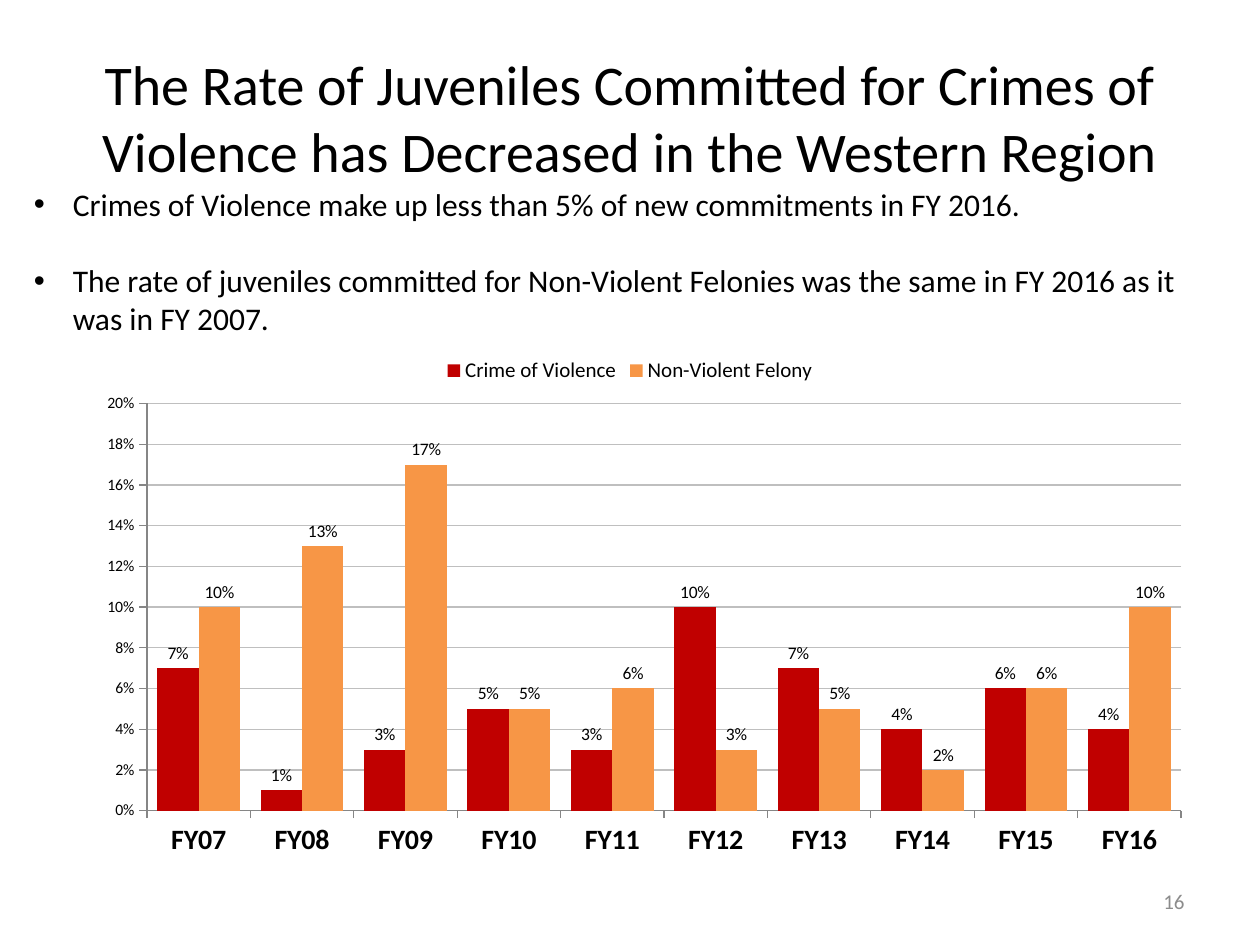
from dataclasses import dataclass

import pptx
import pptx.chart.data
import pptx.dml.color
import pptx.enum.chart
import pptx.enum.text
import pptx.oxml
import pptx.oxml.ns
import pptx.util
from pptx.util import Inches


@dataclass(frozen=True)
class Theme:
    font: str = "Calibri"
    text: str = "000000"
    muted: str = "8C8C8C"
    grid: str = "BFBFBF"
    axis: str = "868686"
    violence: str = "C00000"
    felony: str = "F79646"
    title_size: int = 32
    body_size: int = 18
    category_size: int = 16
    small_size: int = 12
    label_size: int = 10
    scale_size: int = 9


THEME = Theme()

TITLE = ("The Rate of Juveniles Committed for Crimes of Violence "
         "has Decreased in the Western Region")
BULLETS = [
    "Crimes of Violence make up less than 5% of new commitments in FY 2016.",
    "The rate of juveniles committed for Non-Violent Felonies was the same "
    "in FY 2016 as it was in FY 2007.",
]
YEARS = [f"FY{year:02d}" for year in range(7, 17)]
SERIES = [
    ("Crime of Violence", THEME.violence,
     [0.07, 0.01, 0.03, 0.05, 0.03, 0.10, 0.07, 0.04, 0.06, 0.04]),
    ("Non-Violent Felony", THEME.felony,
     [0.10, 0.13, 0.17, 0.05, 0.06, 0.03, 0.05, 0.02, 0.06, 0.10]),
]
PLOT_AREA = {"x": 0.074, "y": 0.112, "w": 0.912, "h": 0.766}


def apply(target, values):
    for name, value in values.items():
        setattr(target, name, value)


def rgb(color):
    return pptx.dml.color.RGBColor.from_string(color)


def format_font(font, size, color=THEME.text, bold=False):
    apply(font, {"name": THEME.font, "size": pptx.util.Pt(size), "bold": bold})
    font.color.rgb = rgb(color)


def format_line(line, color):
    line.color.rgb = rgb(color)
    line.width = pptx.util.Pt(0.75)


def add_title(slide):
    title = slide.shapes.title
    apply(title, {"left": Inches(0.5), "top": Inches(0.3),
                  "width": Inches(9), "height": Inches(1.25)})
    title.text_frame.text = TITLE
    title.text_frame.vertical_anchor = pptx.enum.text.MSO_ANCHOR.MIDDLE
    paragraph = title.text_frame.paragraphs[0]
    paragraph.alignment = pptx.enum.text.PP_ALIGN.CENTER
    format_font(paragraph.runs[0].font, THEME.title_size)


def add_bullet_mark(paragraph):
    properties = paragraph._p.get_or_add_pPr()
    properties.set("marL", str(Inches(0.31)))
    properties.set("indent", str(-Inches(0.31)))
    namespace = pptx.oxml.ns.nsdecls("a")
    for xml in (f'<a:buFont {namespace} typeface="Arial"/>',
                f'<a:buChar {namespace} char="•"/>'):
        properties.append(pptx.oxml.parse_xml(xml))


def add_bullets(slide):
    box = slide.shapes.add_textbox(
        Inches(0.17), Inches(1.42), Inches(9.5), Inches(1.31))
    frame = box.text_frame
    frame.word_wrap = True
    frame.text = "\n".join(BULLETS)
    for paragraph in frame.paragraphs:
        format_font(paragraph.runs[0].font, THEME.body_size)
    for paragraph in frame.paragraphs[:-1]:
        paragraph.space_after = pptx.util.Pt(22)
    for paragraph in frame.paragraphs:
        add_bullet_mark(paragraph)


def add_page_number(slide, number):
    box = slide.shapes.add_textbox(
        Inches(7.17), Inches(6.95), Inches(2.33), Inches(0.4))
    frame = box.text_frame
    apply(frame, {"word_wrap": True, "text": number,
                  "vertical_anchor": pptx.enum.text.MSO_ANCHOR.MIDDLE})
    paragraph = frame.paragraphs[0]
    paragraph.alignment = pptx.enum.text.PP_ALIGN.RIGHT
    format_font(paragraph.runs[0].font, THEME.small_size, THEME.muted)


def place_plot_area(chart):
    """Fix the inner plot area as fractions of the chart."""
    plot_area = chart._chartSpace.chart.plotArea
    for old_layout in plot_area.findall(pptx.oxml.ns.qn("c:layout")):
        plot_area.remove(old_layout)
    modes = "".join(f'<c:{side}Mode val="edge"/>' for side in "xy")
    sizes = "".join(f'<c:{side} val="{value}"/>' for side, value in PLOT_AREA.items())
    plot_area.insert(0, pptx.oxml.parse_xml(
        f'<c:layout {pptx.oxml.ns.nsdecls("c")}><c:manualLayout>'
        f'<c:layoutTarget val="inner"/>{modes}{sizes}'
        '</c:manualLayout></c:layout>'))


def format_axes(chart):
    outside = pptx.enum.chart.XL_TICK_MARK.OUTSIDE
    for axis in (chart.category_axis, chart.value_axis):
        axis.major_tick_mark = outside
        format_line(axis.format.line, THEME.axis)
    format_font(chart.category_axis.tick_labels.font, THEME.category_size, bold=True)

    scale = chart.value_axis
    apply(scale, {"minimum_scale": 0, "maximum_scale": 0.2, "major_unit": 0.02,
                  "has_major_gridlines": True})
    format_line(scale.major_gridlines.format.line, THEME.grid)
    apply(scale.tick_labels, {"number_format": "0%",
                              "number_format_is_linked": False})
    format_font(scale.tick_labels.font, THEME.scale_size)


def format_series(series, color):
    series.invert_if_negative = False
    series.format.fill.solid()
    series.format.fill.fore_color.rgb = rgb(color)
    labels = series.data_labels
    apply(labels, {"show_value": True, "number_format": "0%",
                   "number_format_is_linked": False,
                   "position": pptx.enum.chart.XL_LABEL_POSITION.OUTSIDE_END})
    format_font(labels.font, THEME.label_size)


def add_rate_chart(slide):
    data = pptx.chart.data.CategoryChartData(number_format="0%")
    data.categories = YEARS
    for name, _, values in SERIES:
        data.add_series(name, values)
    chart = slide.shapes.add_chart(
        pptx.enum.chart.XL_CHART_TYPE.COLUMN_CLUSTERED,
        Inches(0.5), Inches(2.73), Inches(9), Inches(4.22), data).chart
    apply(chart, {"has_title": False, "has_legend": True})
    format_font(chart.font, THEME.label_size)
    apply(chart.legend, {"position": pptx.enum.chart.XL_LEGEND_POSITION.TOP,
                         "include_in_layout": False})
    format_font(chart.legend.font, THEME.small_size)
    plot = chart.plots[0]
    apply(plot, {"gap_width": 50, "overlap": 0, "vary_by_categories": False})
    for series, (_, color, _) in zip(plot.series, SERIES):
        format_series(series, color)
    format_axes(chart)
    place_plot_area(chart)


def main():
    presentation = pptx.Presentation()
    apply(presentation, {"slide_width": Inches(10), "slide_height": Inches(7.5)})
    title_only = presentation.slide_layouts.get_by_name("Title Only")
    slide = presentation.slides.add_slide(title_only)
    add_title(slide)
    add_page_number(slide, "16")
    add_bullets(slide)
    add_rate_chart(slide)
    presentation.save("out.pptx")


if __name__ == "__main__":
    main()
